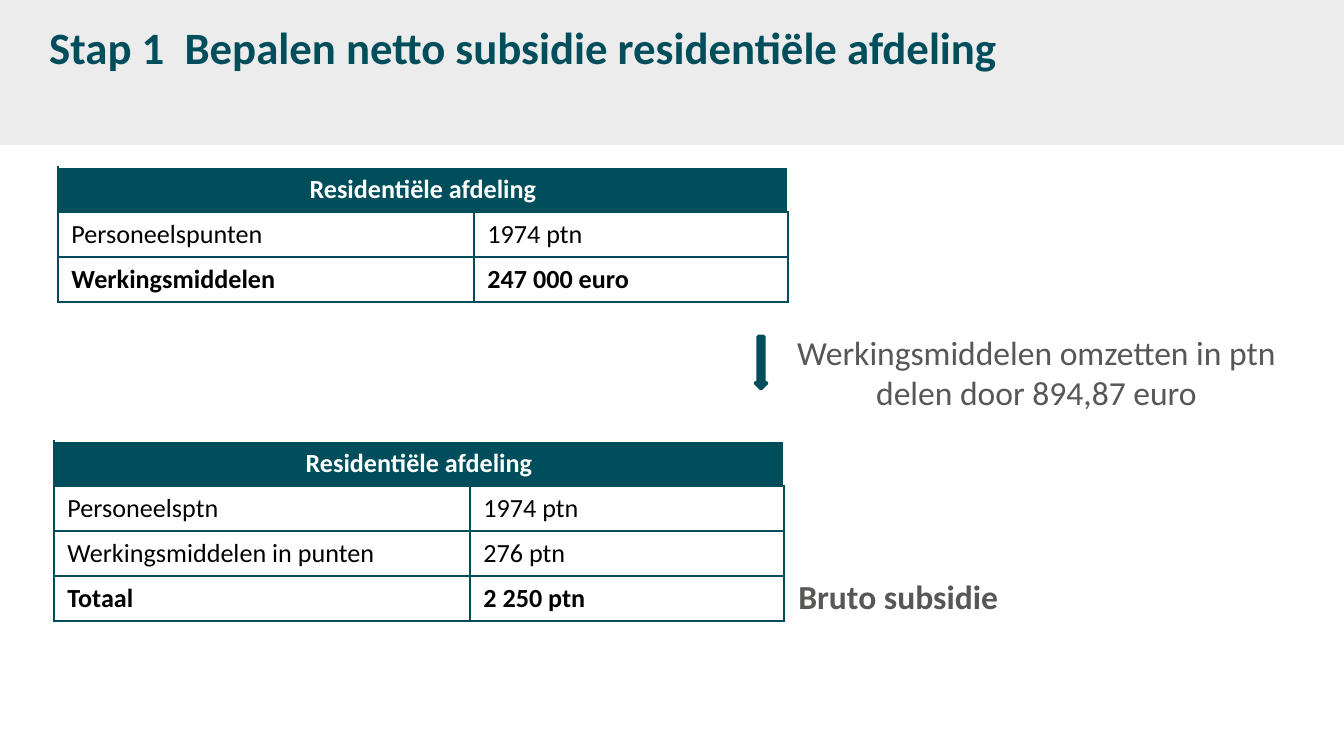
from lxml.etree import SubElement
from pptx import Presentation
from pptx.dml.color import RGBColor
from pptx.enum.shapes import MSO_SHAPE
from pptx.enum.text import MSO_ANCHOR, PP_ALIGN
from pptx.oxml.ns import qn
from pptx.util import Emu, Pt

# Content
FONT = "Calibri"
COLORS = {"teal": "004D5C", "band": "ECECEC", "grey": "575756",
          "white": "FFFFFF", "black": "000000"}
TITLE = "Stap 1  Bepalen netto subsidie residentiële afdeling"
HEADER = "Residentiële afdeling"
# left, top, rows; the last row of each table is bold
TABLES = [
    (58, 167, [("Personeelspunten", "1974 ptn"),
               ("Werkingsmiddelen", "247 000 euro")]),
    (54, 441, [("Personeelsptn", "1974 ptn"),
               ("Werkingsmiddelen in punten", "276 ptn"),
               ("Totaal", "2 250 ptn")]),
]
COL_WIDTHS = (416, 314)
ROW_HEIGHT = 45
# box, bold, paragraphs
NOTES = [
    ((784, 325, 512, 95), False,
     [("Werkingsmiddelen omzetten in ptn", PP_ALIGN.LEFT),
      ("delen door 894,87 euro", PP_ALIGN.CENTER)]),
    ((785, 569, 237, 54), True, [("Bruto subsidie", PP_ALIGN.LEFT)]),
]


def px(n):
    return Emu(round(n * 914400 / 134.4))


def rgb(name):
    return RGBColor.from_string(COLORS[name])


def add_run(p, text, size, color, bold=False):
    r = p.add_run()
    r.text = text
    r.font.name = FONT
    r.font.size = Pt(size)
    r.font.bold = bold
    r.font.color.rgb = rgb(color)


def add_text(s, box, paragraphs, size, color, bold, wrap=False):
    tf = s.shapes.add_textbox(*map(px, box)).text_frame
    tf.word_wrap = wrap
    for i, (text, align) in enumerate(paragraphs):
        p = tf.paragraphs[0] if i == 0 else tf.add_paragraph()
        p.alignment = align
        add_run(p, text, size, color, bold)
    return tf


def add_block(s, kind, box, color):
    sp = s.shapes.add_shape(kind, *map(px, box))
    sp.shadow.inherit = False
    sp.fill.solid()
    sp.fill.fore_color.rgb = rgb(color)
    sp.line.fill.background()
    return sp


def set_borders(cell, sides):
    tcPr = cell._tc.get_or_add_tcPr()
    for i, (tag, color) in enumerate(sides.items()):
        ln = SubElement(tcPr, qn(f"a:{tag}"), w=str(Pt(1)))
        fill = SubElement(ln, qn("a:solidFill"))
        SubElement(fill, qn("a:srgbClr"), val=COLORS[color])
        tcPr.remove(ln)
        tcPr.insert(i, ln)  # borders come before the fill


def add_table(s, left, top, rows):
    n = len(rows) + 1
    table = s.shapes.add_table(n, 2, px(left), px(top), px(sum(COL_WIDTHS)),
                               px(ROW_HEIGHT * n)).table
    table.first_row = table.horz_banding = False
    for col, width in zip(table.columns, COL_WIDTHS):
        col.width = px(width)
    for row in table.rows:
        row.height = px(ROW_HEIGHT)

    # Header across both columns
    head = table.cell(0, 0)
    head.merge(table.cell(0, 1))
    for cell in table.rows[0].cells:
        cell.fill.solid()
        cell.fill.fore_color.rgb = rgb("teal")
        set_borders(cell, {"lnL": "teal", "lnR": "white",
                           "lnT": "white", "lnB": "teal"})
    p = head.text_frame.paragraphs[0]
    p.alignment = PP_ALIGN.CENTER
    add_run(p, HEADER, 14, "white", True)

    # Body
    for i, values in enumerate(rows, 1):
        for j, value in enumerate(values):
            cell = table.cell(i, j)
            cell.fill.background()
            set_borders(cell, dict.fromkeys(("lnL", "lnR", "lnT", "lnB"), "teal"))
            add_run(cell.text_frame.paragraphs[0], value, 14, "black", i == n - 1)


prs = Presentation()
prs.slide_width, prs.slide_height = px(1344), px(756)
s = prs.slides.add_slide(prs.slide_layouts[6])

# Title band
add_block(s, MSO_SHAPE.RECTANGLE, (0, -3, 1344, 148), "band")
title = add_text(s, (36, 0, 1090, 93), [(TITLE, PP_ALIGN.LEFT)], 24, "teal", True, True)
title.vertical_anchor = MSO_ANCHOR.MIDDLE

# Tables and notes
for left, top, rows in TABLES:
    add_table(s, left, top, rows)
for box, bold, paragraphs in NOTES:
    add_text(s, box, paragraphs, 18, "grey", bold)

# Arrow between the tables
arrow = add_block(s, MSO_SHAPE.RIGHT_ARROW, (735, 357, 52, 11), "teal")
arrow.rotation = 90
arrow.line.color.rgb = rgb("teal")
arrow.line.width = Pt(2)

prs.save("out.pptx")
